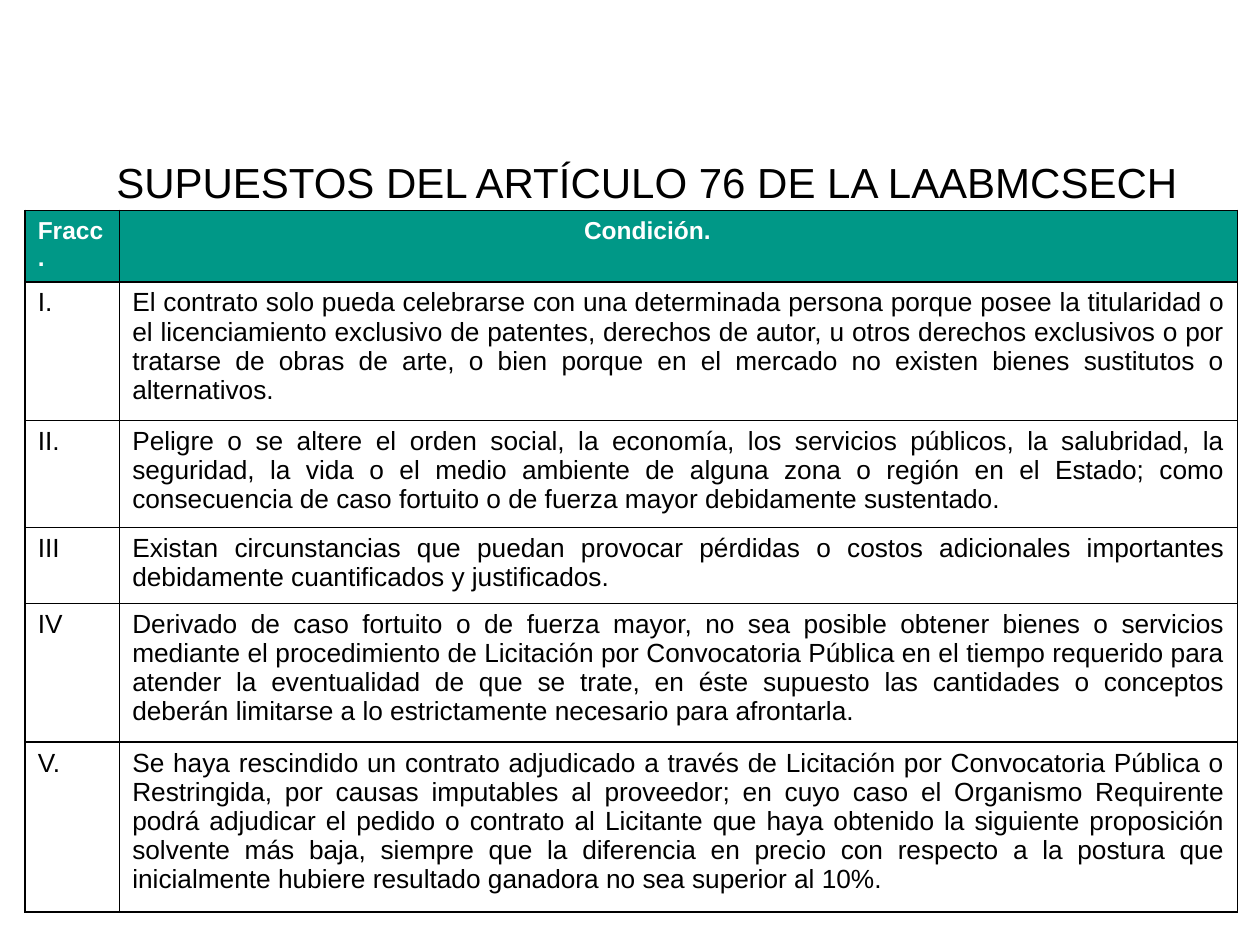
from dataclasses import dataclass

import pptx
import pptx.dml.color
import pptx.enum.text
import pptx.oxml
import pptx.oxml.ns
import pptx.util
from pptx.util import Inches

ALIGN = pptx.enum.text.PP_ALIGN


@dataclass(frozen=True)
class Theme:
    font: str = "Arial"
    text: str = "000000"
    header_text: str = "FFFFFF"
    header_fill: str = "009887"
    border: str = "000000"
    title_size: int = 24
    header_size: int = 14
    body_size: int = 15
    border_width: int = 1


THEME = Theme()

TITLE = "SUPUESTOS DEL ARTÍCULO 76 DE LA LAABMCSECH"
HEADER = ("Fracc.", "Condición.\t")
COLUMN_WIDTHS = (0.75, 8.87)
HEADER_HEIGHT = 0.56
# Fraction, condition, row height in inches
FRACTIONS = [
    ("I.", "El contrato solo pueda celebrarse con una determinada persona porque posee la "
     "titularidad o el licenciamiento exclusivo de patentes, derechos de autor, u otros "
     "derechos exclusivos o por tratarse de obras de arte, o bien porque en el mercado no "
     "existen bienes sustitutos o alternativos.", 1.1),
    ("II.", "Peligre o se altere el orden social, la economía, los servicios públicos, la "
     "salubridad, la seguridad, la vida o el medio ambiente de alguna zona o región en el "
     "Estado; como consecuencia de caso fortuito o de fuerza mayor debidamente "
     "sustentado.", 0.85),
    ("III", "Existan circunstancias que puedan provocar pérdidas o costos adicionales "
     "importantes debidamente cuantificados y justificados.", 0.6),
    ("IV", "Derivado de caso fortuito o de fuerza mayor, no sea posible obtener bienes o "
     "servicios mediante el procedimiento de Licitación por Convocatoria Pública en el "
     "tiempo requerido para atender la eventualidad de que se trate, en éste supuesto las "
     "cantidades o conceptos deberán limitarse a lo estrictamente necesario para "
     "afrontarla.", 1.1),
    ("V.", "Se haya rescindido un contrato adjudicado a través de Licitación por "
     "Convocatoria Pública o Restringida, por causas imputables al proveedor; en cuyo caso "
     "el Organismo Requirente podrá adjudicar el pedido o contrato al Licitante que haya "
     "obtenido la siguiente proposición solvente más baja, siempre que la diferencia en "
     "precio con respecto a la postura que inicialmente hubiere resultado ganadora no sea "
     "superior al 10%.", 1.35),
]


def write_text(text_frame, text, size, color, bold=False, alignment=ALIGN.LEFT):
    paragraph = text_frame.paragraphs[0]
    paragraph.alignment = alignment
    run = paragraph.add_run()
    run.text = text
    values = {"name": THEME.font, "size": pptx.util.Pt(size), "bold": bold}
    for name, value in values.items():
        setattr(run.font, name, value)
    run.font.color.rgb = pptx.dml.color.RGBColor.from_string(color)


def set_borders(cell):
    properties = cell._tc.get_or_add_tcPr()
    for position, side in enumerate(("lnL", "lnR", "lnT", "lnB")):
        line = pptx.oxml.parse_xml(
            f'<a:{side} {pptx.oxml.ns.nsdecls("a")} w="{pptx.util.Pt(THEME.border_width)}">'
            f'<a:solidFill><a:srgbClr val="{THEME.border}"/></a:solidFill></a:{side}>')
        properties.insert(position, line)


def add_title(slide, left, top, width, height):
    box = slide.shapes.add_textbox(left, top, width, height)
    box.text_frame.word_wrap = True
    write_text(box.text_frame, TITLE, THEME.title_size, THEME.text, alignment=ALIGN.CENTER)


def add_fraction_table(slide, left, top, width, height):
    rows = [HEADER] + [fraction[:2] for fraction in FRACTIONS]
    heights = [HEADER_HEIGHT] + [fraction[2] for fraction in FRACTIONS]
    table = slide.shapes.add_table(len(rows), len(HEADER), left, top, width, height).table
    for column, share in zip(table.columns, COLUMN_WIDTHS):
        column.width = int(width * share / sum(COLUMN_WIDTHS))
    for row, share in zip(table.rows, heights):
        row.height = int(height * share / sum(heights))

    header_style = {"size": THEME.header_size, "color": THEME.header_text, "bold": True}
    body_style = {"size": THEME.body_size, "color": THEME.text}
    for row_index, texts in enumerate(rows):
        is_header = row_index == 0
        style = header_style if is_header else body_style
        condition_alignment = ALIGN.CENTER if is_header else ALIGN.JUSTIFY
        for column_index, text in enumerate(texts):
            cell = table.cell(row_index, column_index)
            if is_header:
                cell.fill.solid()
                cell.fill.fore_color.rgb = pptx.dml.color.RGBColor.from_string(
                    THEME.header_fill)
            else:
                cell.fill.background()
            set_borders(cell)
            alignment = condition_alignment if column_index else ALIGN.LEFT
            write_text(cell.text_frame, text, alignment=alignment, **style)


def main():
    presentation = pptx.Presentation()
    presentation.slide_width = Inches(10)
    presentation.slide_height = Inches(7.5)
    slide = presentation.slides.add_slide(presentation.slide_layouts[6])
    add_title(slide, Inches(0.8), Inches(1.19), Inches(8.67), Inches(0.5))
    add_fraction_table(slide, Inches(0.2), Inches(1.67), Inches(9.62), Inches(5.56))
    presentation.save("out.pptx")


if __name__ == "__main__":
    main()
